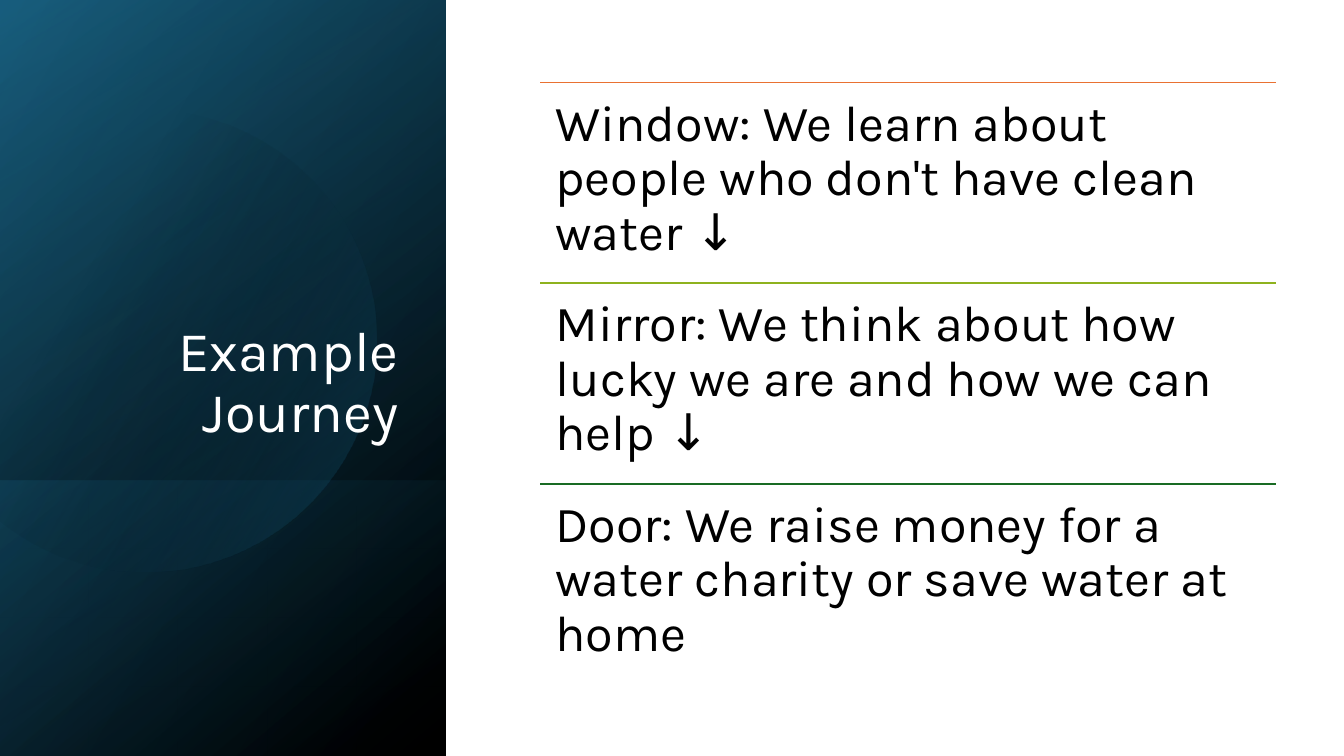
from math import acos, cos, sin

from lxml import etree
from pptx import Presentation
from pptx.dml.color import RGBColor
from pptx.enum.shapes import MSO_CONNECTOR, MSO_SHAPE
from pptx.enum.text import MSO_ANCHOR, PP_ALIGN
from pptx.oxml.ns import qn
from pptx.util import Cm, Pt

RECT = MSO_SHAPE.RECTANGLE
LINE = MSO_CONNECTOR.STRAIGHT
TOP, BOTTOM = MSO_ANCHOR.TOP, MSO_ANCHOR.BOTTOM
LEFT, RIGHT = PP_ALIGN.LEFT, PP_ALIGN.RIGHT

HUES = {
    "black": "000000", "white": "FFFFFF", "navy": "104862", "teal": "156082",
    "sky": "46B1E1", "orange": "E97132", "lime": "8EB21E", "green": "196B24",
}
STEPS = [
    ("orange", "Window: We learn about people who don't have clean water ↓"),
    ("lime", "Mirror: We think about how lucky we are and how we can help ↓"),
    ("green", "Door: We raise money for a water charity or save water at home"),
]


def hue(name):
    """Return the named colour."""
    return RGBColor.from_string(HUES[name])


def apply(item, values):
    """Set each attribute of an item from a dict."""
    for name, value in values.items():
        setattr(item, name, value)


def shade(shape, angle, *stops):
    """Fill a shape with a clockwise gradient of (percent, colour, opacity)."""
    shape.shadow.inherit = False
    shape.line.fill.background()
    shape.fill.gradient()
    shape.fill.gradient_angle = 360 - angle
    for stop, (place, name, _) in zip(shape.fill.gradient_stops, stops):
        stop.position = place / 100
        stop.color.rgb = hue(name)
    tints = shape._element.spPr.iter(qn("a:srgbClr"))
    for tint, (_, _, solid) in zip(tints, stops):
        etree.SubElement(tint, qn("a:alpha"), val=str(solid * 1000))


def write(slide, box, text, size, name, align, frame):
    """Place one wrapped paragraph in a box."""
    area = slide.shapes.add_textbox(*map(Cm, box)).text_frame
    apply(area, {"word_wrap": True, **frame})
    para = area.paragraphs[0]
    para.text = text
    apply(para, {"alignment": align, "line_spacing": 0.9})
    font = para.runs[0].font
    apply(font, {"name": "Karla", "size": Pt(size)})
    font.color.rgb = hue(name)


def disc(slide, left, top, mid, rad):
    """Draw a circle cut off at its left limit and return it."""
    turn = acos(-mid / rad)
    count = 120
    dots = []
    for step in range(count + 1):
        arc = turn * (2 * step / count - 1)
        dots.append((Cm(left + mid + rad * cos(arc)),
                     Cm(top + rad + rad * sin(arc))))
    form = slide.shapes.build_freeform(*dots[0])
    form.add_line_segments(dots[1:], close=True)
    return form.convert_to_shape()


def panel(slide, left, top, width, height):
    """Draw the shaded side panel with its title."""
    low = 6.95
    full = (left, top, width, height)
    band = (left, top + height - low, width, low)
    layers = [
        (full, 50, (0, "navy", 100), (92, "black", 100)),
        (full, 60, (1, "teal", 46), (100, "black", 0)),
        (band, 50, (0, "teal", 29), (98, "black", 30)),
    ]
    for box, angle, *stops in layers:
        shade(slide.shapes.add_shape(RECT, *map(Cm, box)), angle, *stops)
    shade(disc(slide, left, top + 2.75, 3.66, 5.82), 30,
          (29, "black", 0), (100, "teal", 43))
    sheen = slide.shapes.add_shape(RECT, *map(Cm, full))
    shade(sheen, 30, (1, "sky", 11), (100, "black", 0))
    title = (left + 1.63, top + 4.67, 8.66, 6.65)
    write(slide, title, "Example Journey", 40, "white", RIGHT,
          {"vertical_anchor": BOTTOM})


def steps(slide, left, top, width, height):
    """Stack the ruled steps in equal rows."""
    row = height / len(STEPS)
    sides = ("left", "top", "right", "bottom")
    frame = {f"margin_{side}": Cm(0.38) for side in sides}
    frame["vertical_anchor"] = TOP
    for index, (name, text) in enumerate(STEPS):
        y = top + index * row
        rule = slide.shapes.add_connector(
            LINE, Cm(left), Cm(y), Cm(left + width), Cm(y))
        rule.line.color.rgb = hue(name)
        rule.line.width = Pt(1)
        etree.SubElement(rule._element.spPr, qn("a:effectLst"))
        write(slide, (left, y, width, row), text, 36, "black", LEFT, frame)


def main():
    """Build and save the slide."""
    deck = Presentation()
    apply(deck, {"slide_width": Cm(33.87), "slide_height": Cm(19.05)})
    slide = deck.slides.add_slide(deck.slide_layouts[6])
    panel(slide, 0, 0, 11.23, 19.05)
    steps(slide, 13.62, 2.08, 18.53, 15.17)
    deck.save("out.pptx")


if __name__ == "__main__":
    main()
